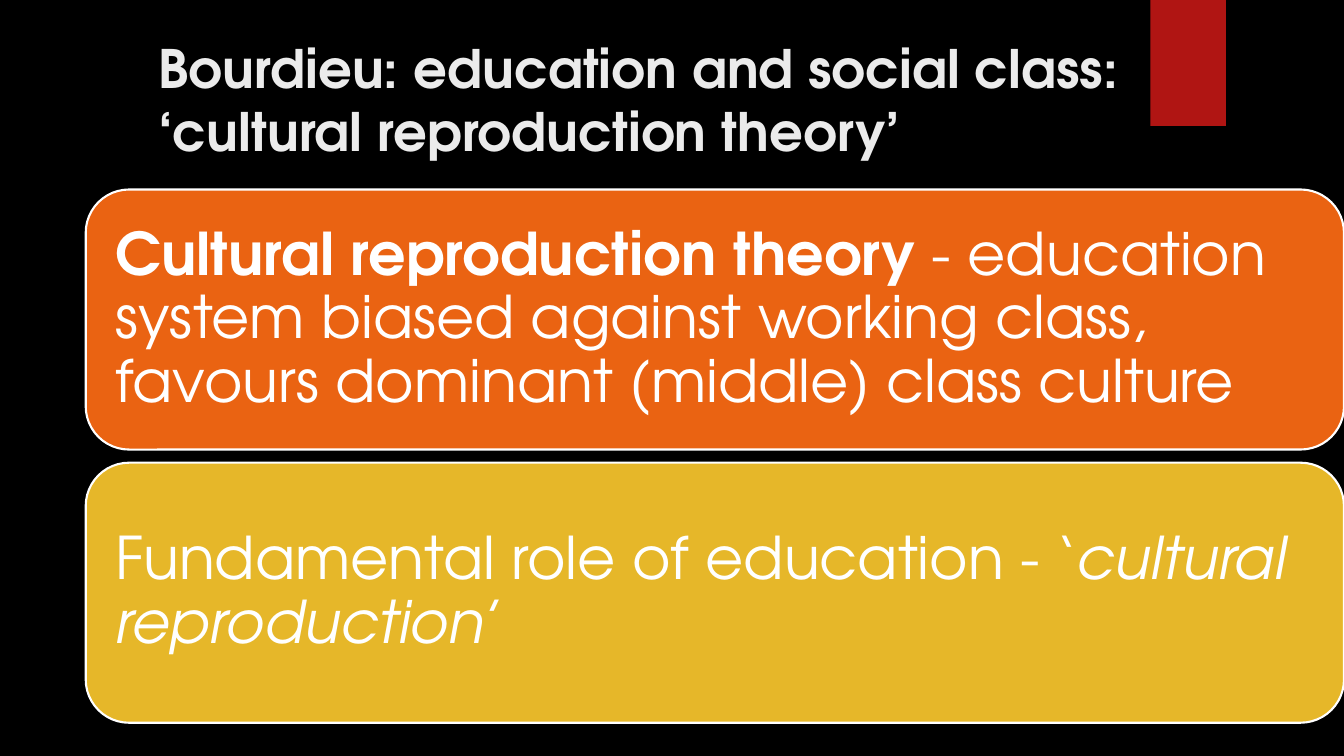
from pptx import Presentation
from pptx.dml.color import RGBColor
from pptx.enum.shapes import MSO_SHAPE
from pptx.enum.text import MSO_ANCHOR, PP_ALIGN
from pptx.util import Inches, Pt

COLORS = {"background": "000000", "ribbon": "B01513", "title": "EBEBEB",
          "orange": "EA6312", "gold": "E6B729", "white": "FFFFFF"}


def rgb(name):
    return RGBColor.from_string(COLORS[name])


class Deck:
    font = "TeX Gyre Adventor"

    def __init__(self):
        self.prs = Presentation()
        self.prs.slide_width = Inches(13.33)
        self.prs.slide_height = Inches(7.5)

    def add_slide(self):
        self.s = self.prs.slides.add_slide(self.prs.slide_layouts[6])
        fill = self.s.background.fill
        fill.solid()
        fill.fore_color.rgb = rgb("background")

    def shape(self, kind, box, fill, line=None):
        sp = self.s.shapes.add_shape(kind, *map(Inches, box))
        sp.shadow.inherit = False
        sp.fill.solid()
        sp.fill.fore_color.rgb = rgb(fill)
        if line:
            sp.line.color.rgb = rgb(line)
            sp.line.width = Pt(1.5)
        else:
            sp.line.fill.background()
        return sp

    def text(self, box, runs, size, color, anchor, insets, spacing=1.0):
        """Add a text box; runs is a list of (text, font values) pairs."""
        tf = self.s.shapes.add_textbox(*map(Inches, box)).text_frame
        tf.word_wrap = True
        tf.vertical_anchor = anchor
        for side, inset in zip(("left", "top", "right", "bottom"), insets):
            setattr(tf, f"margin_{side}", Inches(inset))
        p = tf.paragraphs[0]
        p.alignment = PP_ALIGN.LEFT
        p.line_spacing = spacing
        for words, values in runs:
            r = p.add_run()
            r.text = words
            style = {"name": self.font, "size": Pt(size), **values}
            for key, value in style.items():
                setattr(r.font, key, value)
            r.font.color.rgb = rgb(color)

    def card(self, top, fill, runs):
        left, width, height, pad = 0.85, 12.48, 2.58, 0.125
        self.shape(MSO_SHAPE.ROUNDED_RECTANGLE, (left, top, width, height),
                   fill, line="white")
        inner = (left + pad, top + pad, width - 2 * pad, height - 2 * pad)
        self.text(inner, runs, 42, "white", MSO_ANCHOR.MIDDLE,
                  (0.17,) * 4, spacing=0.9)


def main():
    deck = Deck()
    deck.add_slide()
    deck.shape(MSO_SHAPE.RECTANGLE, (11.41, 0, 0.75, 1.25), "ribbon")
    title = "Bourdieu: education and social class: ‘cultural reproduction theory’"
    deck.text((1.47, 0.3, 10.32, 1.25), [(title, {"bold": True})], 37.8,
              "title", MSO_ANCHOR.TOP, (0.1, 0.05, 0.1, 0.05))
    cards = [
        ("orange", [
            ("Cultural reproduction theory", {"bold": True}),
            (" - education system biased against working class, "
             "favours dominant (middle) class culture", {})]),
        ("gold", [
            ("Fundamental role of education - ‘", {}),
            ("cultural reproduction", {"italic": True}),
            ("’", {})]),
    ]
    for i, (fill, runs) in enumerate(cards):
        deck.card(1.88 + i * 2.71, fill, runs)
    deck.prs.save("out.pptx")


if __name__ == "__main__":
    main()
